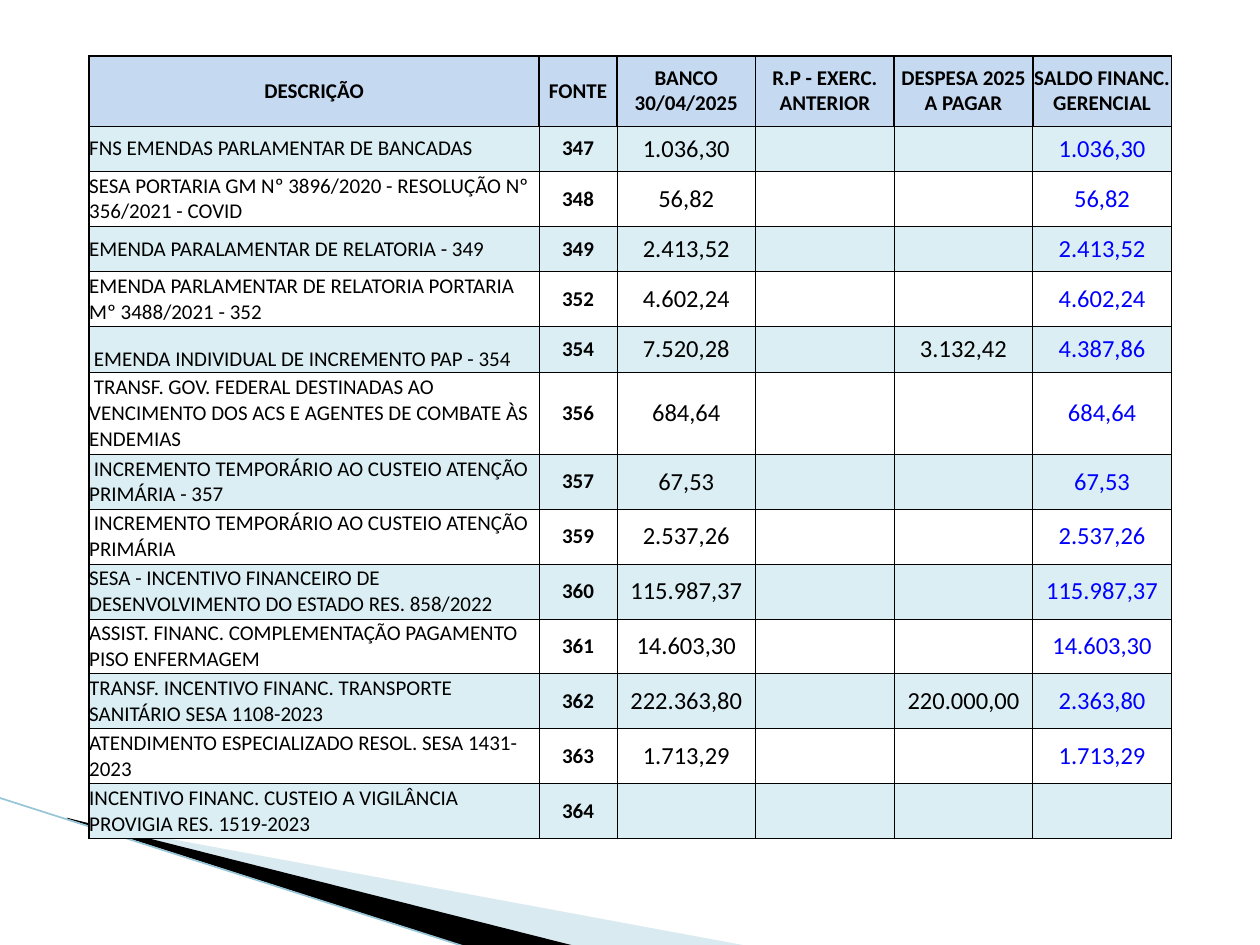
from dataclasses import dataclass

from lxml.etree import SubElement
from pptx import Presentation
from pptx.dml.color import RGBColor
from pptx.enum.shapes import MSO_CONNECTOR as Connector
from pptx.enum.text import MSO_ANCHOR as Anchor, PP_ALIGN as Align
from pptx.oxml import parse_xml
from pptx.oxml.ns import nsdecls, qn
from pptx.util import Pt


@dataclass(frozen=True)
class Theme:
    font: str = "Calibri"
    label_size: float = 12
    value_size: float = 14
    ink: str = "000000"
    balance: str = "0000FF"
    header: str = "C5D9F1"
    band: str = "DAEEF3"
    wedge: str = "A0CBDC"
    edge: str = "97C5D8"


theme = Theme()


def add_wedge(points, color):
    start, *rest = [(Pt(x), Pt(y)) for x, y in points]
    builder = page.shapes.build_freeform(*start, scale=1.0)
    builder.add_line_segments(rest, close=True)
    wedge = builder.convert_to_shape()
    wedge.shadow.inherit = False
    wedge.fill.solid()
    wedge.fill.fore_color.rgb = RGBColor.from_string(color)
    wedge.line.fill.background()
    return wedge


def set_borders(cell, left, right, top, bottom):
    properties = cell._tc.get_or_add_tcPr()
    widths = {"lnL": left, "lnR": right, "lnT": top, "lnB": bottom}
    for index, (side, width) in enumerate(widths.items()):
        properties.insert(index, parse_xml(
            f'<a:{side} {nsdecls("a")} w="{Pt(width)}"><a:solidFill>'
            f'<a:srgbClr val="{theme.ink}"/></a:solidFill></a:{side}>'))


deck = Presentation()
deck.slide_width, deck.slide_height = Pt(720), Pt(540)
page = deck.slides.add_slide(deck.slide_layouts[6])

# Corner decoration
pale = add_wedge([(39.6, 468.7), (428.4, 540.7), (328.3, 540.7), (39.6, 468)], theme.wedge)
pale_color = pale.fill._xPr.find(qn("a:solidFill"))[0]
SubElement(pale_color, qn("a:alpha"), val="40000")
add_wedge([(38.2, 467.3), (329, 540.7), (267.8, 541.4), (38.9, 468)], theme.ink)

edge = page.shapes.add_connector(Connector.STRAIGHT, Pt(-0.7), Pt(455.8), Pt(267.1), Pt(541.4))
edge.line.color.rgb = RGBColor.from_string(theme.edge)
edge.line.width = Pt(0.95)
SubElement(edge._element.spPr, qn("a:effectLst"))

# Table content: description, source, bank, carried over, payable, balance
rows = [
    ("DESCRIÇÃO", "FONTE", "BANCO 30/04/2025", "R.P - EXERC. ANTERIOR",
     "DESPESA 2025 A PAGAR", "SALDO FINANC. GERENCIAL"),
    ("FNS EMENDAS PARLAMENTAR DE BANCADAS", "347", "1.036,30", "", "", "1.036,30"),
    ("SESA PORTARIA GM Nº 3896/2020 - RESOLUÇÃO Nº 356/2021 - COVID",
     "348", "56,82", "", "", "56,82"),
    ("EMENDA PARALAMENTAR DE RELATORIA - 349", "349", "2.413,52", "", "", "2.413,52"),
    ("EMENDA PARLAMENTAR DE RELATORIA PORTARIA Mº 3488/2021 - 352",
     "352", "4.602,24", "", "", "4.602,24"),
    (" EMENDA INDIVIDUAL DE INCREMENTO PAP - 354",
     "354", "7.520,28", "", "3.132,42", "4.387,86"),
    (" TRANSF. GOV. FEDERAL DESTINADAS AO VENCIMENTO DOS ACS E AGENTES DE COMBATE ÀS ENDEMIAS",
     "356", "684,64", "", "", "684,64"),
    (" INCREMENTO TEMPORÁRIO AO CUSTEIO ATENÇÃO PRIMÁRIA - 357",
     "357", "67,53", "", "", "67,53"),
    (" INCREMENTO TEMPORÁRIO AO CUSTEIO ATENÇÃO PRIMÁRIA",
     "359", "2.537,26", "", "", "2.537,26"),
    ("SESA - INCENTIVO FINANCEIRO DE DESENVOLVIMENTO DO ESTADO RES. 858/2022",
     "360", "115.987,37", "", "", "115.987,37"),
    ("ASSIST. FINANC. COMPLEMENTAÇÃO PAGAMENTO PISO ENFERMAGEM",
     "361", "14.603,30", "", "", "14.603,30"),
    ("TRANSF. INCENTIVO FINANC. TRANSPORTE SANITÁRIO SESA 1108-2023",
     "362", "222.363,80", "", "220.000,00", "2.363,80"),
    ("ATENDIMENTO ESPECIALIZADO RESOL. SESA 1431-2023",
     "363", "1.713,29", "", "", "1.713,29"),
    ("INCENTIVO FINANC. CUSTEIO A VIGILÂNCIA PROVIGIA RES. 1519-2023",
     "364", "", "", "", ""),
]
widths = [257, 44.6] + [79.2] * 4
one_line, two_lines, three_lines = 26, 31.4, 46.8
heights = [40, one_line, two_lines, one_line, two_lines, one_line, three_lines] + [two_lines] * 7

# Table grid
table = page.shapes.add_table(len(rows), len(widths), Pt(51), Pt(32),
                              Pt(sum(widths)), Pt(sum(heights))).table
table.horz_banding = False
for column, width in zip(table.columns, widths):
    column.width = Pt(width)
for row, height in zip(table.rows, heights):
    row.height = Pt(height)

# Cells
last = len(widths) - 1
for r, texts in enumerate(rows):
    is_header = r == 0
    for c, text in enumerate(texts):
        cell = table.cell(r, c)
        cell.margin_left = cell.margin_right = cell.margin_top = cell.margin_bottom = 0
        sits_low = c == 0 and texts[1] == "354"
        cell.vertical_anchor = Anchor.BOTTOM if sits_low else Anchor.MIDDLE
        if is_header or r % 2:
            cell.fill.solid()
            cell.fill.fore_color.rgb = RGBColor.from_string(
                theme.header if is_header else theme.band)
        else:
            cell.fill.background()
        set_borders(cell,
                    left=1 if is_header or c == 0 else 0.5,
                    right=1 if is_header or c == last else 0.5,
                    top=1 if is_header else 0.5,
                    bottom=0.5)
        if not text:
            continue
        para = cell.text_frame.paragraphs[0]
        para.alignment = Align.CENTER if is_header or c > 0 else Align.LEFT
        span = para.add_run()
        span.text = text
        span.font.name = theme.font
        span.font.bold = is_header or c == 1
        span.font.size = Pt(theme.label_size if is_header or c < 2 else theme.value_size)
        is_balance = c == last and not is_header
        span.font.color.rgb = RGBColor.from_string(theme.balance if is_balance else theme.ink)

deck.save("out.pptx")
